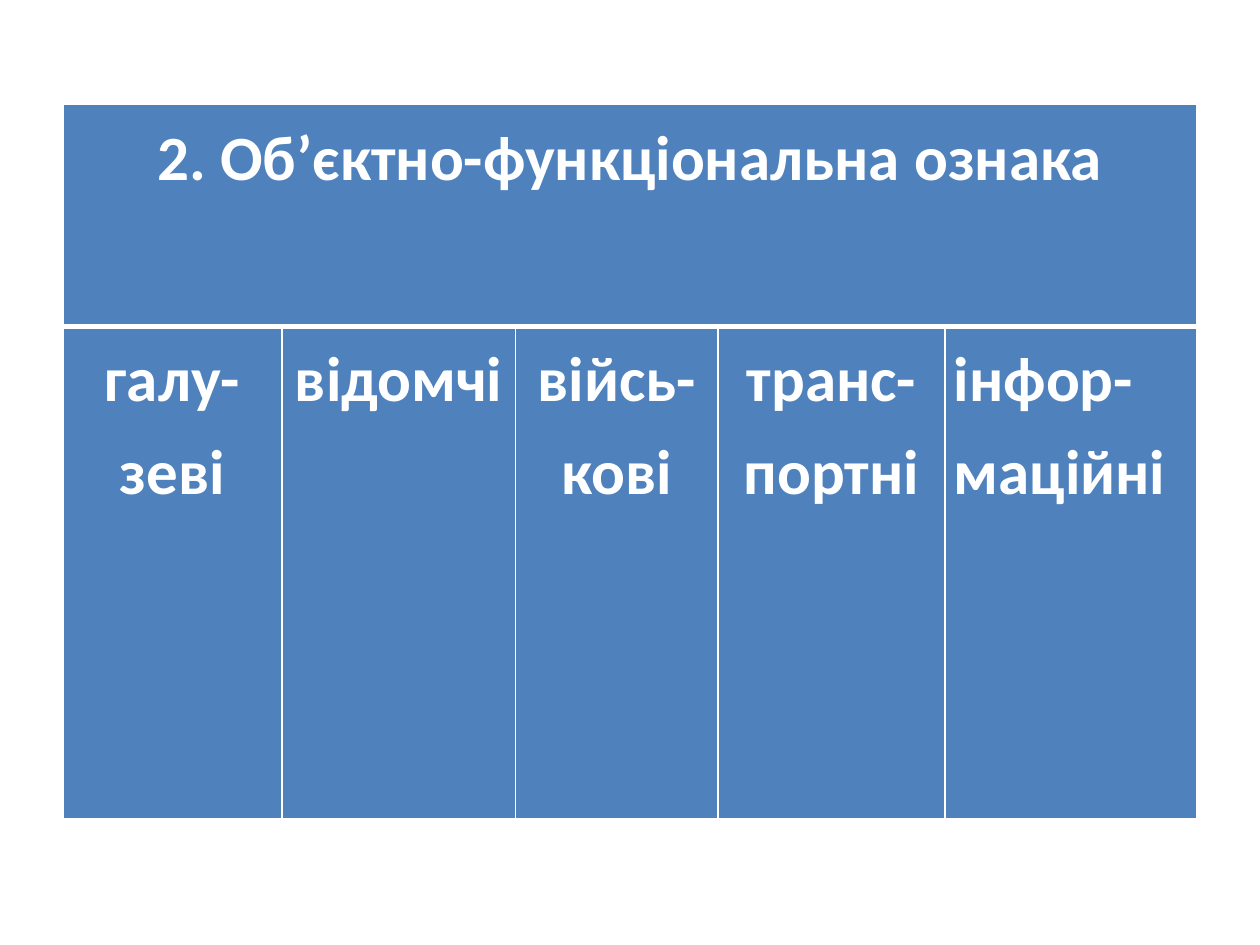
from dataclasses import dataclass

from lxml.etree import SubElement
from pptx import Presentation
from pptx.dml.color import RGBColor
from pptx.enum.text import MSO_ANCHOR, PP_ALIGN as Align
from pptx.oxml.ns import qn
from pptx.table import _Cell as Cell
from pptx.util import Inches, Pt

BLUE, WHITE = "4F81BD", "FFFFFF"
COLUMN_WIDTHS = (1.74, 1.85, 1.61, 1.8, 2)
ROW_HEIGHTS = (1.76, 3.91)
THIN, THICK = 1, 3
CELL_FORMAT = {
    "margin_left": Inches(0.07),
    "margin_right": Inches(0.07),
    "margin_top": 0,
    "margin_bottom": 0,
    "vertical_anchor": MSO_ANCHOR.TOP,
}
FONT_FORMAT = {"name": "Calibri", "size": Pt(36), "bold": True}


@dataclass
class Label:
    text: str
    alignment: Align = Align.CENTER


HEADING = Label("2. Об’єктно-функціональна ознака")
KINDS = (
    Label("галу-зеві"),
    Label("відомчі"),
    Label("війсь-кові"),
    Label("транс-портні"),
    Label("інфор-маційні", Align.JUSTIFY),
)


def set_color(color_format, color: str) -> None:
    color_format.rgb = RGBColor.from_string(color)


def style_cell(cell: Cell, top: float, bottom: float) -> None:
    """Apply margins, white borders (widths in points) and the blue fill."""
    for name, value in CELL_FORMAT.items():
        setattr(cell, name, value)
    properties = cell._tc.get_or_add_tcPr()
    for side, width in (("L", THIN), ("R", THIN), ("T", top), ("B", bottom)):
        line = SubElement(properties, qn(f"a:ln{side}"), w=str(Pt(width)))
        fill = SubElement(line, qn("a:solidFill"))
        SubElement(fill, qn("a:srgbClr"), val=WHITE)
    cell.fill.solid()
    set_color(cell.fill.fore_color, BLUE)


def write_label(cell: Cell, label: Label) -> None:
    paragraph = cell.text_frame.paragraphs[0]
    paragraph.alignment = label.alignment
    paragraph.line_spacing = 1.2
    run = paragraph.add_run()
    run.text = label.text
    for name, value in FONT_FORMAT.items():
        setattr(run.font, name, value)
    set_color(run.font.color, WHITE)


def main() -> None:
    presentation = Presentation()
    presentation.slide_width, presentation.slide_height = Inches(10), Inches(7.5)
    slide = presentation.slides.add_slide(presentation.slide_layouts[6])
    table = slide.shapes.add_table(
        len(ROW_HEIGHTS), len(COLUMN_WIDTHS), Inches(0.5), Inches(0.83),
        Inches(sum(COLUMN_WIDTHS)), Inches(sum(ROW_HEIGHTS))).table
    for column, width in zip(table.columns, COLUMN_WIDTHS):
        column.width = Inches(width)
    for row, height in zip(table.rows, ROW_HEIGHTS):
        row.height = Inches(height)

    for index, kind in enumerate(KINDS):
        style_cell(table.cell(0, index), top=THIN, bottom=THICK)
        style_cell(table.cell(1, index), top=THICK, bottom=THIN)
        write_label(table.cell(1, index), kind)
    heading_cell = table.cell(0, 0)
    heading_cell.merge(table.cell(0, len(KINDS) - 1))
    write_label(heading_cell, HEADING)

    presentation.save("out.pptx")


if __name__ == "__main__":
    main()
